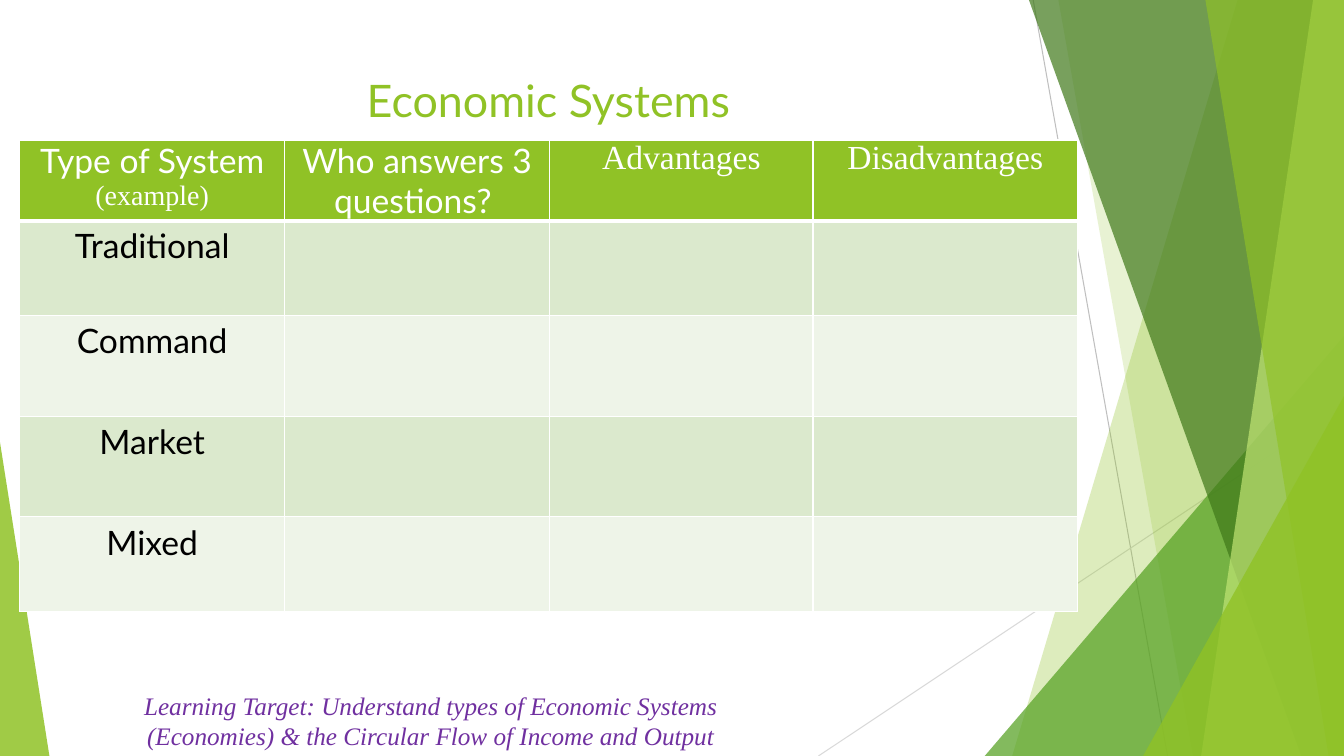
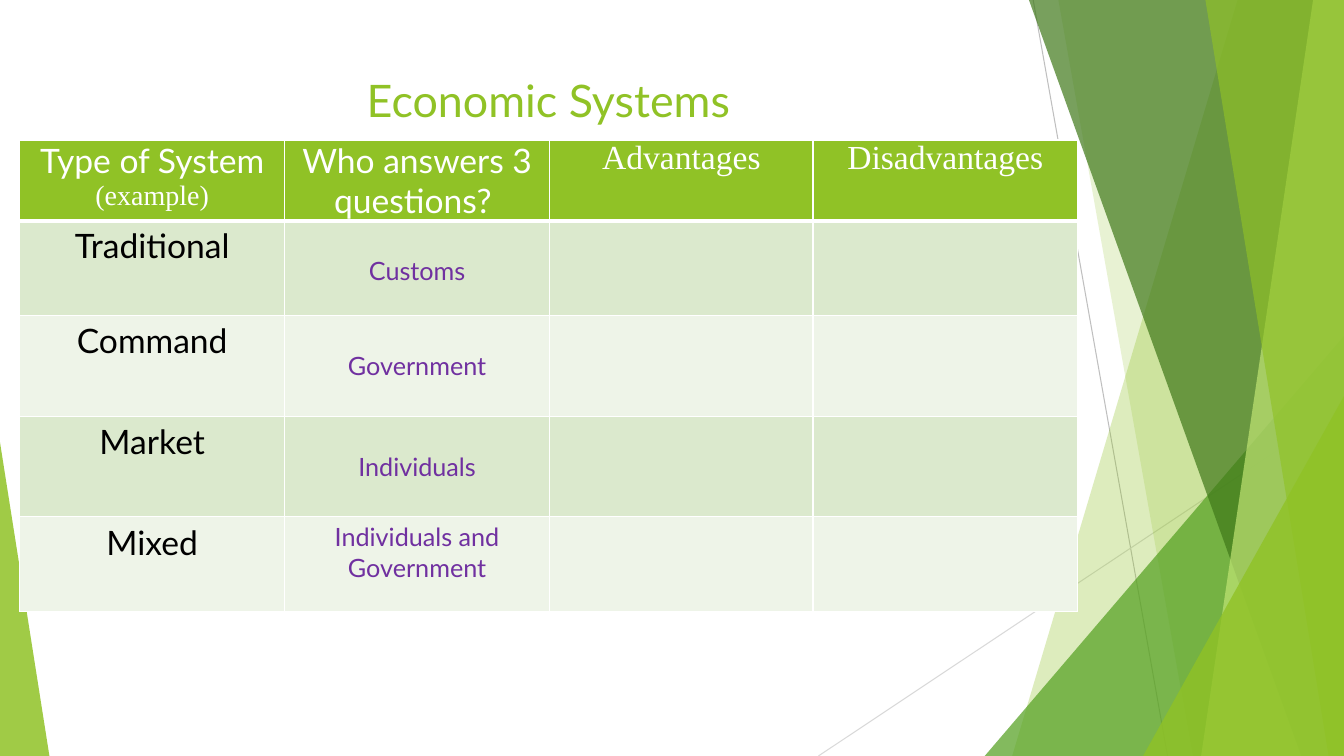
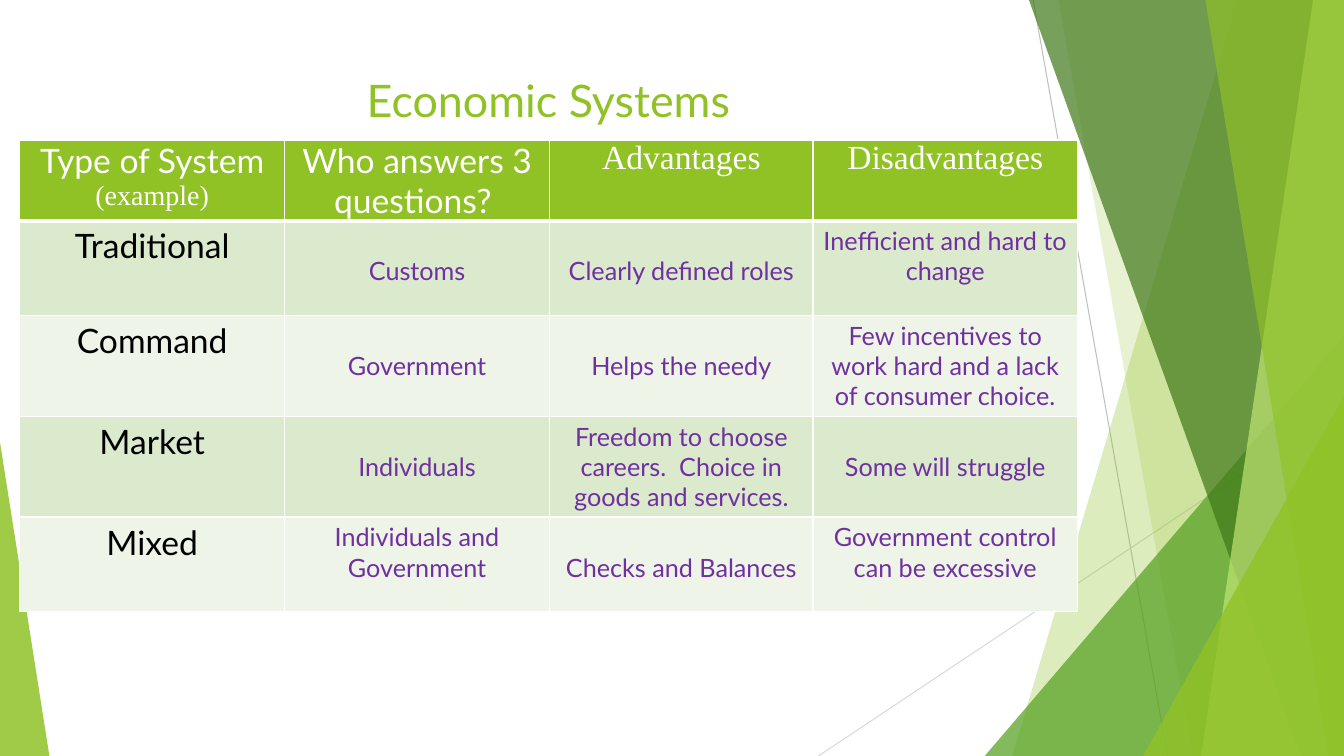
import dataclasses

import pptx
import pptx.dml.color
import pptx.enum.shapes
import pptx.enum.text
import pptx.oxml
import pptx.oxml.ns
import pptx.util

Pt = pptx.util.Pt
SHAPE = pptx.enum.shapes.MSO_SHAPE
ALIGN = pptx.enum.text.PP_ALIGN
ANCHOR = pptx.enum.text.MSO_ANCHOR
NS = pptx.oxml.ns.nsdecls("a")
WIDTH, HEIGHT = 960, 540
TITLE_ONLY = 5


@dataclasses.dataclass(frozen=True)
class Theme:
    lime: str = "90C226"
    pale_lime: str = "C0E474"
    green: str = "54A021"
    dark_green: str = "3F7819"
    odd_row: str = "DBE9CD"
    even_row: str = "EEF4E8"
    purple: str = "7030A0"
    black: str = "000000"
    white: str = "FFFFFF"
    grey: str = "BFBFBF"
    light_grey: str = "D9D9D9"
    sans: str = "Lato"
    serif: str = "Times New Roman"
    title: int = 32
    heading: int = 24
    example: int = 20
    body: int = 18


T = Theme()

HEADERS = [
    [("Type of System", T.sans, T.heading), ("(example)", T.serif, T.example)],
    [("Who answers 3 questions? ", T.sans, T.heading)],
    [("Advantages", T.serif, T.heading)],
    [("Disadvantages", T.serif, T.heading)],
]
SYSTEMS = [
    ("Traditional", "Customs", "Clearly defined roles",
     "Inefficient and hard to change"),
    ("Command", "Government", "Helps the needy",
     "Few incentives to work hard and a lack of consumer choice."),
    ("Market", "Individuals",
     "Freedom to choose careers.  Choice in goods and services.",
     "Some will struggle"),
    ("Mixed", "Individuals and Government", "Checks and Balances",
     "Government control can be excessive"),
]
COLUMN_WIDTHS = [189, 189.5, 188, 189]
ROW_HEIGHTS = [57.6, 67.6, 72, 72, 67.6]
LINE_CHARS = 24  # longest answer that fits on one line
ANSWER_DROP = 25.2  # cell inset that puts a one-line answer on the second line
LEARNING_TARGET = ("Learning Target: Understand types of Economic Systems "
                   "(Economies) & the Circular Flow of Income and Output")


def rgb(color):
    return pptx.dml.color.RGBColor.from_string(color)


def style(p, text, font, size, color, italic=False):
    p.text = text
    p.alignment = ALIGN.CENTER
    p.font.name, p.font.size = font, Pt(size)
    p.font.bold, p.font.italic = False, italic
    p.font.color.rgb = rgb(color)


def paint(shape, color, opacity):
    """Fill a borderless shape with a see-through colour."""
    shape.shadow.inherit = False
    shape.line.fill.background()
    shape.fill.solid()
    shape.fill.fore_color.rgb = rgb(color)
    clr = shape.element.spPr.find(".//" + pptx.oxml.ns.qn("a:srgbClr"))
    clr.append(pptx.oxml.parse_xml(f'<a:alpha {NS} val="{opacity * 1000}"/>'))
    return shape


def add_band(s, top_x, bottom_x, color, opacity):
    """Slanted left edge, filled as far as the right edge of the slide."""
    outline = s.shapes.build_freeform(Pt(top_x), 0)
    outline.add_line_segments([(Pt(WIDTH), 0), (Pt(WIDTH), Pt(HEIGHT)),
                               (Pt(bottom_x), Pt(HEIGHT))])
    return paint(outline.convert_to_shape(), color, opacity)


def add_wedge(s, left, top, width, apex, color, opacity):
    """Triangle standing on the bottom edge of the slide."""
    wedge = s.shapes.add_shape(SHAPE.ISOSCELES_TRIANGLE, Pt(left), Pt(top),
                               Pt(width), Pt(HEIGHT - top))
    wedge.adjustments[0] = apex
    return paint(wedge, color, opacity)


def add_hairline(s, x1, y1, x2, y2, color):
    line = s.shapes.add_connector(pptx.enum.shapes.MSO_CONNECTOR.STRAIGHT,
                                  Pt(x1), Pt(y1), Pt(x2), Pt(y2))
    line.line.color.rgb = rgb(color)
    line.line.width = Pt(0.75)
    line.element.spPr.append(pptx.oxml.parse_xml(f"<a:effectLst {NS}/>"))
    return line


def add_backdrop(s, layout):
    """Draw the facets on a slide, then move them to its layout."""
    facets = [
        add_hairline(s, 738, 0, 834, HEIGHT, T.grey),
        add_hairline(s, WIDTH, 290, 584.6, HEIGHT, T.light_grey),
        add_band(s, 884, 723, T.lime, 30),
        add_band(s, 756, 852, T.lime, 20),
        add_wedge(s, 703.4, 240, 256.6, 1, T.green, 72),
        add_band(s, 735, 929.5, T.dark_green, 70),
        add_band(s, 938, 858, T.pale_lime, 70),
        add_band(s, 861, 949, T.lime, 65),
        add_wedge(s, 816.5, 283, 143.5, 1, T.lime, 80),
        add_wedge(s, 0, 316, 35.3, 0, T.lime, 85),
    ]
    for number, facet in enumerate(facets, 100):
        facet.element.xpath(".//p:cNvPr")[0].set("id", str(number))
        layout.shapes.element.append(facet.element)


def add_title(s, text):
    title = s.shapes.title
    title.left, title.top = Pt(53.3), Pt(48)
    title.width, title.height = Pt(677), Pt(104)
    tf = title.text_frame
    tf.vertical_anchor = ANCHOR.TOP
    style(tf.paragraphs[0], text, T.sans, T.title, T.lime)


def format_cell(cell, fill, top=1, bottom=1):
    """Fill a cell and give it white borders; top and bottom are widths."""
    cell.fill.solid()
    cell.fill.fore_color.rgb = rgb(fill)
    borders = {"L": 1, "R": 1, "T": top, "B": bottom}
    for place, (side, width) in enumerate(borders.items()):
        cell.fill  # borders precede the fill in the cell properties
        cell_properties(cell).insert(place, pptx.oxml.parse_xml(
            f'<a:ln{side} {NS} w="{Pt(width)}"><a:solidFill>'
            f'<a:srgbClr val="{T.white}"/></a:solidFill></a:ln{side}>'))


def cell_properties(cell):
    return cell.text_frame._txBody.getparent().get_or_add_tcPr()


def add_systems_table(s, answer_columns):
    """Table of the systems with the first answer columns filled in."""
    frame = s.shapes.add_table(
        len(ROW_HEIGHTS), len(COLUMN_WIDTHS), Pt(14.2), Pt(100),
        Pt(sum(COLUMN_WIDTHS)), Pt(sum(ROW_HEIGHTS)))
    table = frame.table
    table.first_row = table.horz_banding = False
    for column, width in zip(table.columns, COLUMN_WIDTHS):
        column.width = Pt(width)
    for row, height in zip(table.rows, ROW_HEIGHTS):
        row.height = Pt(height)

    for c, lines in enumerate(HEADERS):
        cell = table.cell(0, c)
        format_cell(cell, T.lime, bottom=3)
        cell.margin_left = cell.margin_right = Pt(5)
        cell.margin_top = cell.margin_bottom = 0
        tf = cell.text_frame
        for i, (text, font, size) in enumerate(lines):
            p = tf.add_paragraph() if i else tf.paragraphs[0]
            style(p, text, font, size, T.white)

    for r, texts in enumerate(SYSTEMS, 1):
        for c, text in enumerate(texts):
            cell = table.cell(r, c)
            format_cell(cell, T.odd_row if r % 2 else T.even_row,
                        top=3 if r == 1 else 1)
            p = cell.text_frame.paragraphs[0]
            if c == 0:
                style(p, text, T.sans, T.heading, T.black)
            elif c <= answer_columns:
                style(p, text, T.sans, T.body, T.purple)
                if len(text) < LINE_CHARS:
                    cell.margin_top = Pt(ANSWER_DROP)


def add_learning_target(s):
    box = s.shapes.add_textbox(Pt(67.7), Pt(489.6), Pt(480), Pt(51))
    tf = box.text_frame
    tf.word_wrap = True
    tf.auto_size = pptx.enum.text.MSO_AUTO_SIZE.SHAPE_TO_FIT_TEXT
    style(tf.paragraphs[0], LEARNING_TARGET, T.serif, T.body, T.purple,
          italic=True)


def main():
    prs = pptx.Presentation()
    prs.slide_width, prs.slide_height = Pt(WIDTH), Pt(HEIGHT)
    layout = prs.slide_layouts[TITLE_ONLY]
    slides = [prs.slides.add_slide(layout) for _ in range(3)]
    add_backdrop(slides[0], layout)
    for s, answer_columns in zip(slides, (0, 1, 3)):
        add_title(s, "Economic Systems")
        add_systems_table(s, answer_columns)
    add_learning_target(slides[0])
    prs.save("out.pptx")


if __name__ == "__main__":
    main()
